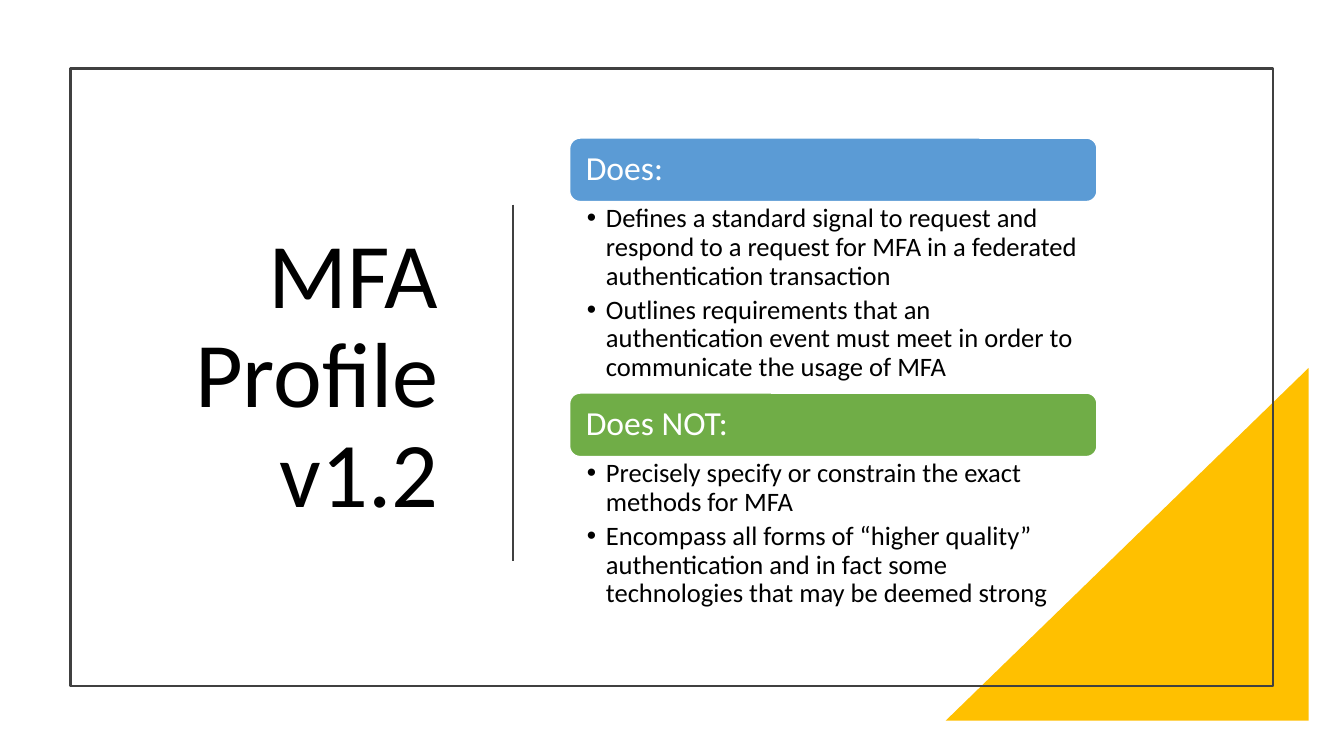
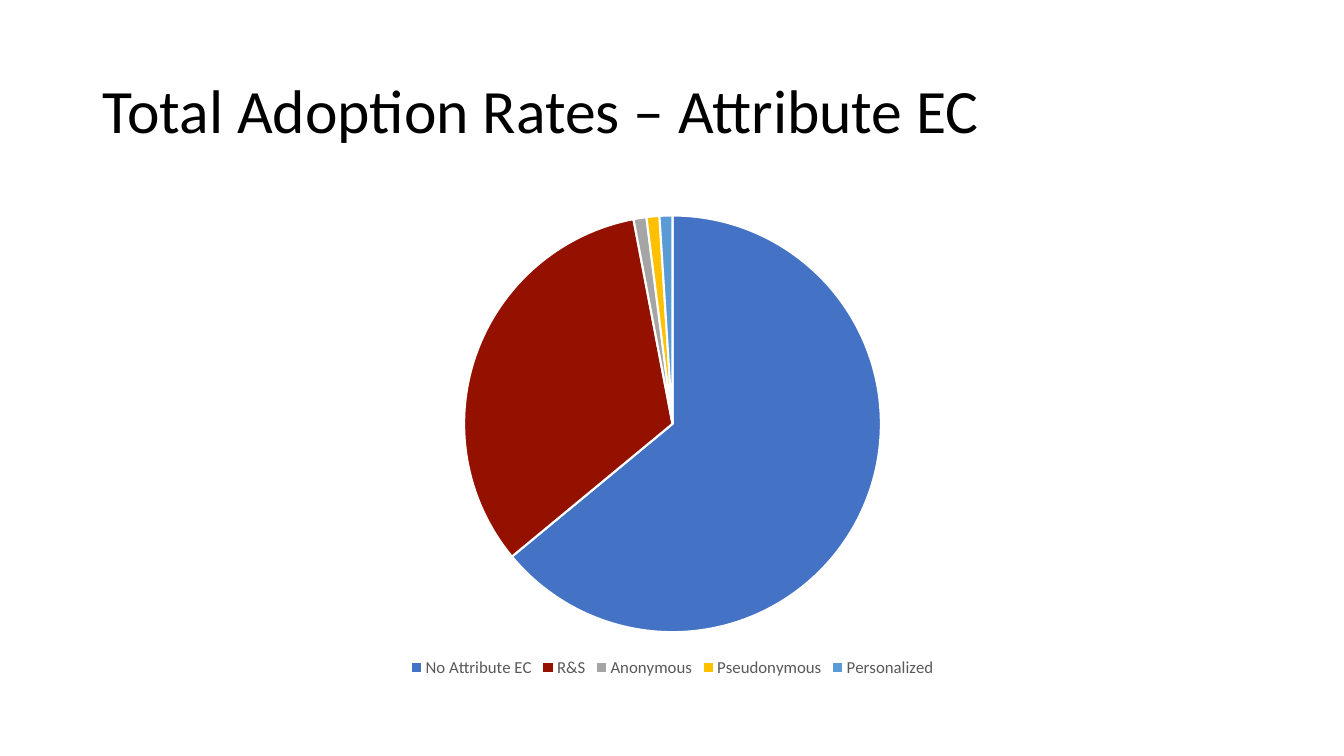
from lxml import etree
from pptx import Presentation
from pptx import util as u
from pptx.chart import data
from pptx.dml.color import RGBColor
from pptx.enum import chart as ch
from pptx.enum import shapes, text
from pptx.oxml import ns

BLACK = RGBColor(0x00, 0x00, 0x00)
WHITE = RGBColor(0xFF, 0xFF, 0xFF)
DARK = RGBColor(0x40, 0x40, 0x40)
GRAY = RGBColor(0x59, 0x59, 0x59)
SKY = RGBColor(0x5B, 0x9B, 0xD5)
GREEN = RGBColor(0x70, 0xAD, 0x47)
GOLD = RGBColor(0xFF, 0xC0, 0x00)
BLUE = RGBColor(0x44, 0x72, 0xC4)
RED = RGBColor(0x94, 0x11, 0x00)
SILVER = RGBColor(0xA5, 0xA5, 0xA5)


def put(item, **vals):
    """Set each named attribute on the item."""
    for name, val in vals.items():
        setattr(item, name, val)


def box(left, top, width, height):
    """Give a place in inches as keyword values."""
    names = ("left", "top", "width", "height")
    return dict(zip(names, map(u.Inches, (left, top, width, height))))


def inset(left, top, right, bottom):
    """Give text margins in inches as keyword values."""
    names = ("margin_left", "margin_top", "margin_right", "margin_bottom")
    return dict(zip(names, map(u.Inches, (left, top, right, bottom))))


class Deck:
    """Hold the style and the current slide."""

    face = "Calibri"
    para = {"line_spacing": 0.9, "space_before": u.Pt(0)}
    frame = {"word_wrap": True, "auto_size": text.MSO_AUTO_SIZE.NONE}

    def __init__(self):
        """Open a wide deck."""
        self.prs = Presentation()
        put(self.prs, slide_width=u.Inches(13.33), slide_height=u.Inches(7.5))
        self.slide = None

    def page(self, layout):
        """Start a slide from a template layout."""
        self.slide = self.prs.slides.add_slide(self.prs.slide_layouts[layout])

    def font(self, font, size, color):
        """Style a font."""
        put(font, name=self.face, size=u.Pt(size))
        font.color.rgb = color

    def label(self, shape, lines, size, color, align=text.PP_ALIGN.LEFT, after=0):
        """Fill a shape with styled paragraphs."""
        frame = shape.text_frame
        put(frame, **self.frame)
        frame.text = "\n".join(lines)
        for para in frame.paragraphs:
            put(para, alignment=align, space_after=u.Pt(after), **self.para)
            for run in para.runs:
                self.font(run.font, size, color)
        return frame

    def title(self, words, place, size, align=text.PP_ALIGN.LEFT):
        """Place the slide title."""
        shape = self.slide.shapes.title
        put(shape, **place)
        frame = self.label(shape, [words], size, BLACK, align)
        frame.vertical_anchor = text.MSO_ANCHOR.MIDDLE

    def shape(self, kind, place, fill=None, edge=None, width=1.5):
        """Add a preset shape."""
        item = self.slide.shapes.add_shape(kind, **place)
        item.shadow.inherit = False
        if fill is None:
            item.fill.background()
        else:
            item.fill.solid()
            item.fill.fore_color.rgb = fill
        if edge is None:
            item.line.fill.background()
        else:
            item.line.color.rgb = edge
            item.line.width = u.Pt(width)
        return item

    def corner(self, place, fill):
        """Add a triangle with its right angle at the lower right."""
        item = self.shape(shapes.MSO_SHAPE.RIGHT_TRIANGLE, place, fill)
        item.element.spPr.find(ns.qn("a:xfrm")).set("flipH", "1")

    def rule(self, x, top, end):
        """Add an upright line."""
        ends = map(u.Inches, (x, top, x, end))
        line = self.slide.shapes.add_connector(shapes.MSO_CONNECTOR.STRAIGHT, *ends)
        line.line.color.rgb = DARK
        line.line.width = u.Pt(1.5)
        etree.SubElement(line._element.spPr, ns.qn("a:effectLst"))

    def band(self, words, place, fill):
        """Add a rounded heading band."""
        item = self.shape(shapes.MSO_SHAPE.ROUNDED_RECTANGLE, place, fill, WHITE, 1)
        frame = self.label(item, [words], 24, WHITE)
        put(frame, vertical_anchor=text.MSO_ANCHOR.MIDDLE, **inset(0.13, 0.1, 0.13, 0.1))

    def points(self, index, lines, place):
        """Fill a body placeholder with bullets."""
        body = self.slide.placeholders[index]
        put(body, **place)
        frame = self.label(body, lines, 19, BLACK, after=3.8)
        put(frame, vertical_anchor=text.MSO_ANCHOR.TOP, **inset(0.17, 0.03, 0.19, 0.03))
        hang = u.Inches(0.19)
        for para in frame.paragraphs:
            props = para._p.get_or_add_pPr()
            props.set("marL", str(hang))
            props.set("indent", str(-hang))
            etree.SubElement(props, ns.qn("a:buChar")).set("char", "•")

    def pie(self, parts, place):
        """Add a pie chart with a legend below."""
        names, vals, fills = zip(*parts)
        table = data.CategoryChartData()
        table.categories = names
        table.add_series("Series 1", vals)
        spot = place["left"], place["top"], place["width"], place["height"]
        chart = self.slide.shapes.add_chart(ch.XL_CHART_TYPE.PIE, *spot, table).chart
        put(chart, has_title=False, has_legend=True)
        self.font(chart.font, 10, BLACK)
        put(chart.legend, position=ch.XL_LEGEND_POSITION.BOTTOM, include_in_layout=False)
        self.font(chart.legend.font, 12, GRAY)
        plot = chart.plots[0]
        plot.vary_by_categories = True
        for i, fill in enumerate(fills):
            form = plot.series[0].points[i].format
            form.fill.solid()
            form.fill.fore_color.rgb = fill
            form.line.color.rgb = WHITE
            form.line.width = u.Pt(1.5)


def scope(deck):
    """Build the slide on what the profile does and does not do."""
    deck.page(3)
    deck.corner(box(9.38, 3.65, 3.6, 3.5), GOLD)
    deck.shape(shapes.MSO_SHAPE.RECTANGLE, box(0.7, 0.68, 11.93, 6.13), edge=DARK)
    deck.title("MFA\vProfile\vv1.2", box(1.18, 1.3, 3.27, 4.9), 66, text.PP_ALIGN.RIGHT)
    deck.rule(5.09, 2.03, 5.57)
    groups = [
        ("Does:", SKY, 1.9, [
            "Defines a standard signal to request and respond to a request "
            "for MFA in a federated authentication transaction",
            "Outlines requirements that an authentication event must meet "
            "in order to communicate the usage of MFA"]),
        ("Does NOT:", GREEN, 1.6, [
            "Precisely specify or constrain the exact methods for MFA",
            "Encompass all forms of “higher quality” authentication and in "
            "fact some technologies that may be deemed strong"]),
    ]
    top, tall = 1.37, 0.63
    for index, (head, fill, deep, lines) in enumerate(groups, 1):
        deck.band(head, box(5.65, top, 5.23, tall), fill)
        deck.points(index, lines, box(5.65, top + tall, 5.23, deep))
        top += tall + deep


def rates(deck):
    """Build the slide with the adoption pie."""
    deck.page(5)
    deck.title("Total Adoption Rates – Attribute EC", box(0.92, 0.4, 11.5, 1.45), 44)
    parts = [
        ("No Attribute EC", 64, BLUE),
        ("R&S", 33, RED),
        ("Anonymous", 1, SILVER),
        ("Pseudonymous", 1, GOLD),
        ("Personalized", 1, SKY),
    ]
    deck.pie(parts, box(0.92, 2, 11.5, 4.76))


def main():
    """Build and save the deck."""
    deck = Deck()
    scope(deck)
    rates(deck)
    deck.prs.save("out.pptx")


if __name__ == "__main__":
    main()
